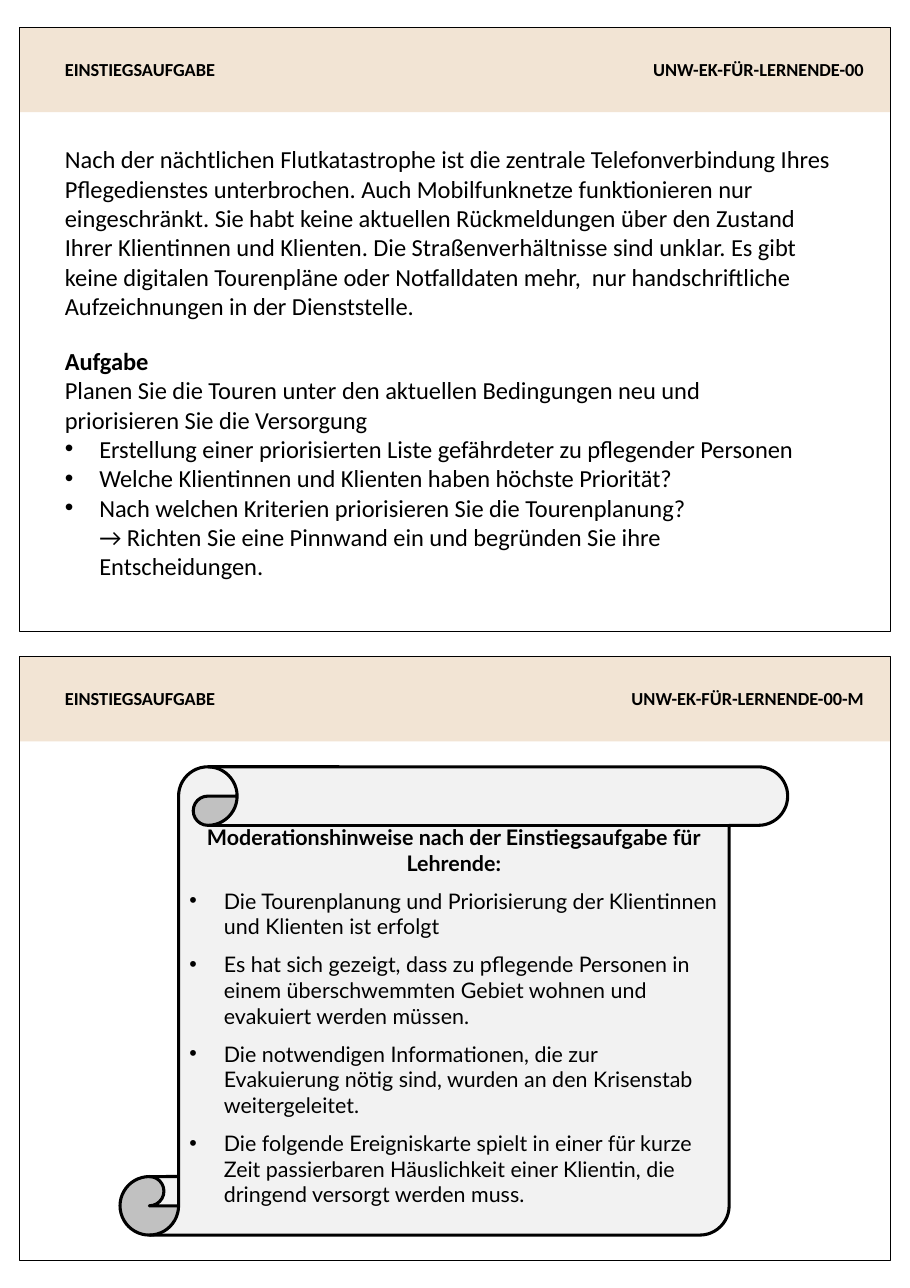
from lxml import etree
from pptx import Presentation
from pptx.dml.color import RGBColor
from pptx.enum.shapes import MSO_SHAPE
from pptx.enum.text import MSO_ANCHOR, PP_ALIGN
from pptx.oxml.ns import qn
from pptx.util import Pt

RECTANGLE = MSO_SHAPE.RECTANGLE
SCROLL = MSO_SHAPE.VERTICAL_SCROLL
LEFT, CENTER, RIGHT = PP_ALIGN.LEFT, PP_ALIGN.CENTER, PP_ALIGN.RIGHT
MIDDLE = MSO_ANCHOR.MIDDLE

COLORS = {"text": "000000", "line": "000000", "band": "F2E4D4", "scroll": "F2F2F2"}
BODY_FONT, SCROLL_FONT = "Calibri", "Lato"

CARD_LEFT, CARD_TOP, CARD_WIDTH, CARD_HEIGHT = 13, 18, 568.8, 394.5
CARD_PITCH = 411.1
BAND_HEIGHT = 55.4
MARGIN = 22.3
BULLET_INDENT = 22.5

SITUATION = (
    "Nach der nächtlichen Flutkatastrophe ist die zentrale Telefonverbindung Ihres "
    "Pflegedienstes unterbrochen. Auch Mobilfunknetze funktionieren nur eingeschränkt. "
    "Sie habt keine aktuellen Rückmeldungen über den Zustand Ihrer Klientinnen und "
    "Klienten. Die Straßenverhältnisse sind unklar. Es gibt keine digitalen Tourenpläne "
    "oder Notfalldaten mehr,  nur handschriftliche Aufzeichnungen in der Dienststelle."
)
TASK_INTRO = (
    "Planen Sie die Touren unter den aktuellen Bedingungen neu und "
    "priorisieren Sie die Versorgung"
)
TASKS = [
    "Erstellung einer priorisierten Liste gefährdeter zu pflegender Personen",
    "Welche Klientinnen und Klienten haben höchste Priorität?",
    "Nach welchen Kriterien priorisieren Sie die Tourenplanung?\v"
    "→ Richten Sie eine Pinnwand ein und begründen Sie ihre Entscheidungen.",
]
HINTS_TITLE = "Moderationshinweise nach der Einstiegsaufgabe für Lehrende:"
HINTS = [
    "Die Tourenplanung und Priorisierung der Klientinnen und Klienten ist erfolgt",
    "Es hat sich gezeigt, dass zu pflegende Personen in einem überschwemmten Gebiet "
    "wohnen und evakuiert werden müssen.",
    "Die notwendigen Informationen, die zur Evakuierung nötig sind, wurden an den "
    "Krisenstab weitergeleitet.",
    "Die folgende Ereigniskarte spielt in einer für kurze Zeit passierbaren "
    "Häuslichkeit einer Klientin, die dringend versorgt werden muss.",
]


def color(name):
    return RGBColor.from_string(COLORS[name])


def add_bullet(paragraph):
    properties = paragraph._p.get_or_add_pPr()
    properties.set("marL", str(Pt(BULLET_INDENT)))
    properties.set("indent", str(-Pt(BULLET_INDENT)))
    etree.SubElement(properties, qn("a:buFont")).set("typeface", "Arial")
    etree.SubElement(properties, qn("a:buChar")).set("char", "•")


def write_paragraphs(text_frame, texts, size, font=BODY_FONT, title=False,
                     bullets_from=None, align=LEFT, space_after=0):
    """Fill a frame; the first paragraph may be a bold title."""
    text_frame.word_wrap = True
    text_frame.text = "\n".join(texts)
    for index, paragraph in enumerate(text_frame.paragraphs):
        is_title = title and index == 0
        paragraph.alignment = align if index == 0 else LEFT
        paragraph.space_after = Pt(space_after)
        if bullets_from is not None and index >= bullets_from:
            add_bullet(paragraph)
        for run in paragraph.runs:
            run.font.name = font
            run.font.size = Pt(size)
            run.font.bold = is_title
            run.font.color.rgb = color("text")


def add_text(slide, left, top, width, height, texts, size, **options):
    box = slide.shapes.add_textbox(Pt(left), Pt(top), Pt(width), Pt(height))
    write_paragraphs(box.text_frame, texts, size, **options)


def add_panel(slide, kind, left, top, width, height, fill=None, line_width=None):
    shape = slide.shapes.add_shape(kind, Pt(left), Pt(top), Pt(width), Pt(height))
    shape.shadow.inherit = False
    if fill:
        shape.fill.solid()
        shape.fill.fore_color.rgb = color(fill)
    else:
        shape.fill.background()
    if line_width:
        shape.line.color.rgb = color("line")
        shape.line.width = Pt(line_width)
    else:
        shape.line.fill.background()
    return shape


def add_card(slide, left, top, width, height, code):
    """Outlined card with a header band, heading and card code."""
    add_panel(slide, RECTANGLE, left, top, width, BAND_HEIGHT, fill="band")
    add_panel(slide, RECTANGLE, left, top, width, height, line_width=0.75)
    header_top, header_height, code_width = top + 16.6, 21.8, 238.3
    code_left = left + width - 10 - code_width
    add_text(slide, code_left, header_top, code_width, header_height,
             [code], 12, title=True, align=RIGHT)
    add_text(slide, left + MARGIN, header_top, 300, header_height,
             ["EINSTIEGSAUFGABE"], 12, title=True)


def add_task_content(slide, left, top):
    """Situation and task of the learners' card."""
    add_text(slide, left + MARGIN, top + 72.7, 522, 123.8, [SITUATION], 16)
    add_text(slide, left + MARGIN, top + 204.5, 500.4, 180,
             ["Aufgabe", TASK_INTRO, *TASKS], 16, title=True, bullets_from=2)


def add_hints_content(slide, left, top):
    """Scroll with the moderation hints."""
    scroll = add_panel(slide, SCROLL, left + 65.5, top + 72, 436.3, 306,
                       fill="scroll", line_width=2)
    scroll.text_frame.vertical_anchor = MIDDLE
    write_paragraphs(scroll.text_frame, [HINTS_TITLE, *HINTS], 14, font=SCROLL_FONT,
                     title=True, bullets_from=1, align=CENTER, space_after=8)


def main():
    presentation = Presentation()
    presentation.slide_width = Pt(594.72)
    presentation.slide_height = Pt(841.68)
    slide = presentation.slides.add_slide(presentation.slide_layouts[6])

    cards = [
        ("UNW-EK-FÜR-LERNENDE-00", add_task_content),
        ("UNW-EK-FÜR-LERNENDE-00-M", add_hints_content),
    ]
    for index, (code, add_content) in enumerate(cards):
        top = CARD_TOP + index * CARD_PITCH
        add_card(slide, CARD_LEFT, top, CARD_WIDTH, CARD_HEIGHT, code)
        add_content(slide, CARD_LEFT, top)

    presentation.save("out.pptx")


if __name__ == "__main__":
    main()
